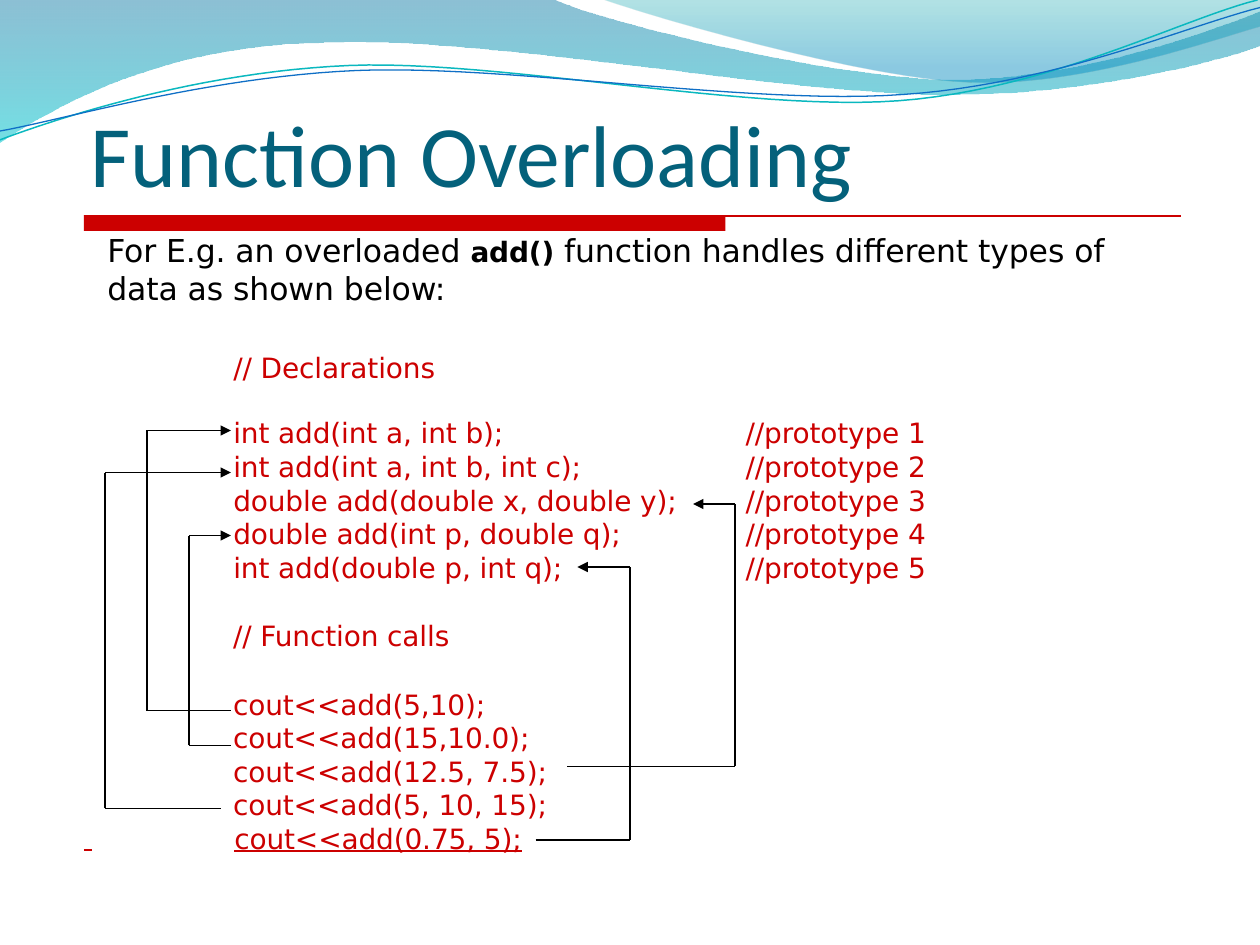
from dataclasses import dataclass

from pptx import Presentation, util as u
from pptx.dml.color import RGBColor
from pptx.enum import shapes, text
from pptx.oxml.ns import qn
from pptx.oxml.xmlchemy import OxmlElement

COLUMNS, ROWS = 120, 90
WIDTH, HEIGHT = u.Inches(10), u.Inches(7.5)


@dataclass(frozen=True)
class Theme:
    """Colours, fonts and type sizes of the slide."""
    title: str = "04617B"
    accent: str = "CC0000"
    ink: str = "000000"
    heading_font: str = "Calibri"
    body_font: str = "DejaVu Sans"
    title_size: float = 50
    intro_size: float = 18
    code_size: float = 16
    line_width: float = 0.75
    rule_width: float = 1


THEME = Theme()

DARK_WAVE = [
    (0, 0), (4.4, 0),
    (4.76, 0.17, 6.64, 0.63, 7.58, 0.63), (8.53, 0.63, 9.58, 0.26, 10, 0.09),
    (10, 0.36),
    (9.83, 0.44, 8.7, 0.76, 7.46, 0.75), (6.22, 0.75, 3.82, 0.28, 2.57, 0.34),
    (1.29, 0.36, 0.46, 0.83, 0, 1.13),
]
LIGHT_WAVE = [
    (4.79, 0),
    (5.09, 0.11, 6.82, 0.62, 7.69, 0.65), (8.56, 0.69, 9.61, 0.32, 10, 0.21),
    (10, 0),
]
GREEN_CURVE = [
    (0, 1.11), (0.48, 0.93, 1.58, 0.57, 2.77, 0.52),
    (3.95, 0.47, 5.93, 0.89, 7.13, 0.8), (8.33, 0.71, 9.38, 0.15, 9.98, 0),
]
BLUE_CURVE = [
    (0, 1.04), (0.47, 0.96, 1.64, 0.61, 2.83, 0.56),
    (4.03, 0.51, 5.97, 0.84, 7.17, 0.75), (8.36, 0.67, 9.41, 0.21, 10, 0.06),
]
DECLARATIONS = [
    "int add(int a, int b);",
    "int add(int a, int b, int c);",
    "double add(double x, double y);",
    "double add(int p, double q);",
    "int add(double p, int q);",
]
CALLS = [
    "cout<<add(5,10);",
    "cout<<add(15,10.0);",
    "cout<<add(12.5, 7.5);",
    "cout<<add(5, 10, 15);",
]
LINKS = [
    (22, 67.7, 14, 41, 22),
    (22, 71, 18, 51, 22),
    (54, 73, 70, 48, 66),
    (21, 77, 10, 45, 22),
    (51, 80, 60, 54, 55),
]


def cell(column, row):
    """Return the slide position of a grid point."""
    return round(WIDTH * column / COLUMNS), round(HEIGHT * row / ROWS)


def colour(value):
    """Return a colour from its hexadecimal text."""
    return RGBColor.from_string(value)


def trace(segments, steps=24):
    """Turn points and cubic segments into a list of points."""
    points = [segments[0]]
    for segment in segments[1:]:
        if len(segment) == 2:
            points.append(segment)
            continue
        controls = [points[-1], segment[:2], segment[2:4], segment[4:]]
        for step in range(1, steps + 1):
            t = step / steps
            weights = (1 - t) ** 3, 3 * t * (1 - t) ** 2, 3 * t * t * (1 - t), t ** 3
            points.append(tuple(
                sum(weight * point[axis] for weight, point in zip(weights, controls))
                for axis in (0, 1)))
    return points


def add_outline(slide, segments, close):
    """Add a freeform outline without a shadow."""
    points = [(u.Inches(x), u.Inches(y)) for x, y in trace(segments)]
    builder = slide.shapes.build_freeform(*points[0])
    builder.add_line_segments(points[1:], close=close)
    shape = builder.convert_to_shape()
    shape.shadow.inherit = False
    return shape


def add_wave(slide, segments, stops):
    """Add a wave filled with a translucent vertical gradient."""
    shape = add_outline(slide, segments, True)
    shape.line.fill.background()
    shape.fill.gradient()
    shape.fill.gradient_angle = 270
    for stop, (position, value, _) in zip(shape.fill.gradient_stops, stops):
        stop.position = position
        stop.color.rgb = colour(value)
    for element, (_, _, opacity) in zip(shape._element.iter(qn("a:srgbClr")), stops):
        alpha = OxmlElement("a:alpha")
        alpha.set("val", str(opacity * 1000))
        element.append(alpha)


def add_curve(slide, segments, value, width):
    """Add an open curved line."""
    shape = add_outline(slide, segments, False)
    shape.fill.background()
    shape.line.color.rgb = colour(value)
    shape.line.width = u.Pt(width)


def add_line(slide, start, end, value=THEME.ink, width=THEME.line_width, arrow=False):
    """Add a straight line between two grid points."""
    line = slide.shapes.add_connector(
        shapes.MSO_CONNECTOR.STRAIGHT, *cell(*start), *cell(*end))
    line.line.color.rgb = colour(value)
    line.line.width = u.Pt(width)
    if arrow:
        head = OxmlElement("a:tailEnd")
        head.set("type", "triangle")
        line.line._get_or_add_ln().append(head)
    line._element.spPr.append(OxmlElement("a:effectLst"))


def add_link(slide, start_column, call_row, turn_column, target_row, end_column):
    """Join a function call to its prototype with an angled arrow."""
    add_line(slide, (start_column, call_row), (turn_column, call_row))
    add_line(slide, (turn_column, call_row), (turn_column, target_row))
    add_line(slide, (turn_column, target_row), (end_column, target_row), arrow=True)


def place(shape, column, row, columns, rows, anchor=text.MSO_ANCHOR.TOP):
    """Put a text shape on the grid and return its frame."""
    shape.left, shape.top = cell(column, row)
    shape.width, shape.height = cell(columns, rows)
    frame = shape.text_frame
    frame.margin_left = frame.margin_right = frame.margin_bottom = 0
    frame.margin_top = u.Inches(0.01)
    frame.word_wrap = True
    frame.auto_size = text.MSO_AUTO_SIZE.NONE
    frame.vertical_anchor = anchor
    return frame


def add_run(paragraph, words, size=THEME.code_size, value=THEME.accent,
            font=THEME.body_font, bold=False, underline=None):
    """Add one formatted run."""
    run = paragraph.add_run()
    run.text = words
    run.font.size = u.Pt(size)
    run.font.name = font
    run.font.bold = bold
    run.font.underline = underline
    run.font.color.rgb = colour(value)
    run._r.get_or_add_rPr().set("spc", "-5")


def add_paragraph(frame, before=0, indent=0.01):
    """Start a left-aligned paragraph without a bullet."""
    paragraph = frame.paragraphs[0]
    if paragraph.runs:
        paragraph = frame.add_paragraph()
    paragraph.alignment = text.PP_ALIGN.LEFT
    paragraph.line_spacing = 1.0
    paragraph.space_before = u.Pt(before)
    properties = paragraph._p.get_or_add_pPr()
    properties.set("marL", str(u.Inches(indent)))
    properties.set("indent", "0")
    properties.append(OxmlElement("a:buNone"))
    return paragraph


def add_code(slide, lines, *area):
    """Add a text box with one paragraph for each code line."""
    frame = place(slide.shapes.add_textbox(0, 0, 0, 0), *area)
    for line in lines:
        add_run(add_paragraph(frame), line)


def add_intro(shape):
    """Write the introduction and the first code heading."""
    frame = place(shape, 10.1, 21.9, 96.8, 14.6)
    paragraph = add_paragraph(frame)
    for words, size, bold in (("For E.g. an overloaded ", THEME.intro_size, False),
                              ("add() ", THEME.code_size, True),
                              ("function handles different types of data as shown below:",
                               THEME.intro_size, False)):
        add_run(paragraph, words, size, THEME.ink, bold=bold)
    add_run(add_paragraph(frame, 25, 1.01), "// Declarations")


def add_calls(slide):
    """Write the function calls, the last one underlined."""
    frame = place(slide.shapes.add_textbox(0, 0, 0, 0), 7.8, 58.8, 104.3, 22.8)
    add_run(add_paragraph(frame, indent=1.2), "// Function calls")
    for index, call in enumerate(CALLS):
        add_run(add_paragraph(frame, 0 if index else 20, 1.2), call)
    add_run(add_paragraph(frame, indent=1.21), "cout<<add(0.75, 5);", underline=True)
    add_line(slide, (8, 80.95), (8.8, 80.95), THEME.accent, THEME.rule_width)


def add_title(slide):
    """Write the title above its red rule."""
    frame = place(slide.shapes.title, 8.5, 9.2, 84.5, 10.3, text.MSO_ANCHOR.BOTTOM)
    add_run(add_paragraph(frame), "Function Overloading", THEME.title_size,
            THEME.title, THEME.heading_font)
    bar = slide.shapes.add_shape(
        shapes.MSO_SHAPE.RECTANGLE, *cell(8, 20.5), *cell(61.1, 1.5))
    bar.shadow.inherit = False
    bar.fill.solid()
    bar.fill.fore_color.rgb = colour(THEME.accent)
    bar.line.fill.background()
    add_line(slide, (8, 20.55), (112.5, 20.55), THEME.accent, THEME.rule_width)


def main():
    """Build and save the slide."""
    presentation = Presentation()
    presentation.slide_width, presentation.slide_height = WIDTH, HEIGHT
    slide = presentation.slides.add_slide(presentation.slide_layouts[1])
    add_wave(slide, DARK_WAVE, [(0, "0074A1", 45), (1, "00C6CF", 55)])
    add_wave(slide, LIGHT_WAVE, [(0, "00A1A9", 30), (0.8, "008BBF", 45)])
    add_curve(slide, GREEN_CURVE, "0AB8BF", 0.85)
    add_curve(slide, BLUE_CURVE, "0F6FC6", 0.75)
    add_title(slide)
    add_intro(slide.placeholders[1])
    add_code(slide, DECLARATIONS, 22.1, 39.5, 44, 16.3)
    add_code(slide, [f"//prototype {number}" for number in range(1, 6)],
             70.9, 39.5, 18.5, 16.3)
    add_calls(slide)
    for link in LINKS:
        add_link(slide, *link)
    presentation.save("out.pptx")


if __name__ == "__main__":
    main()
